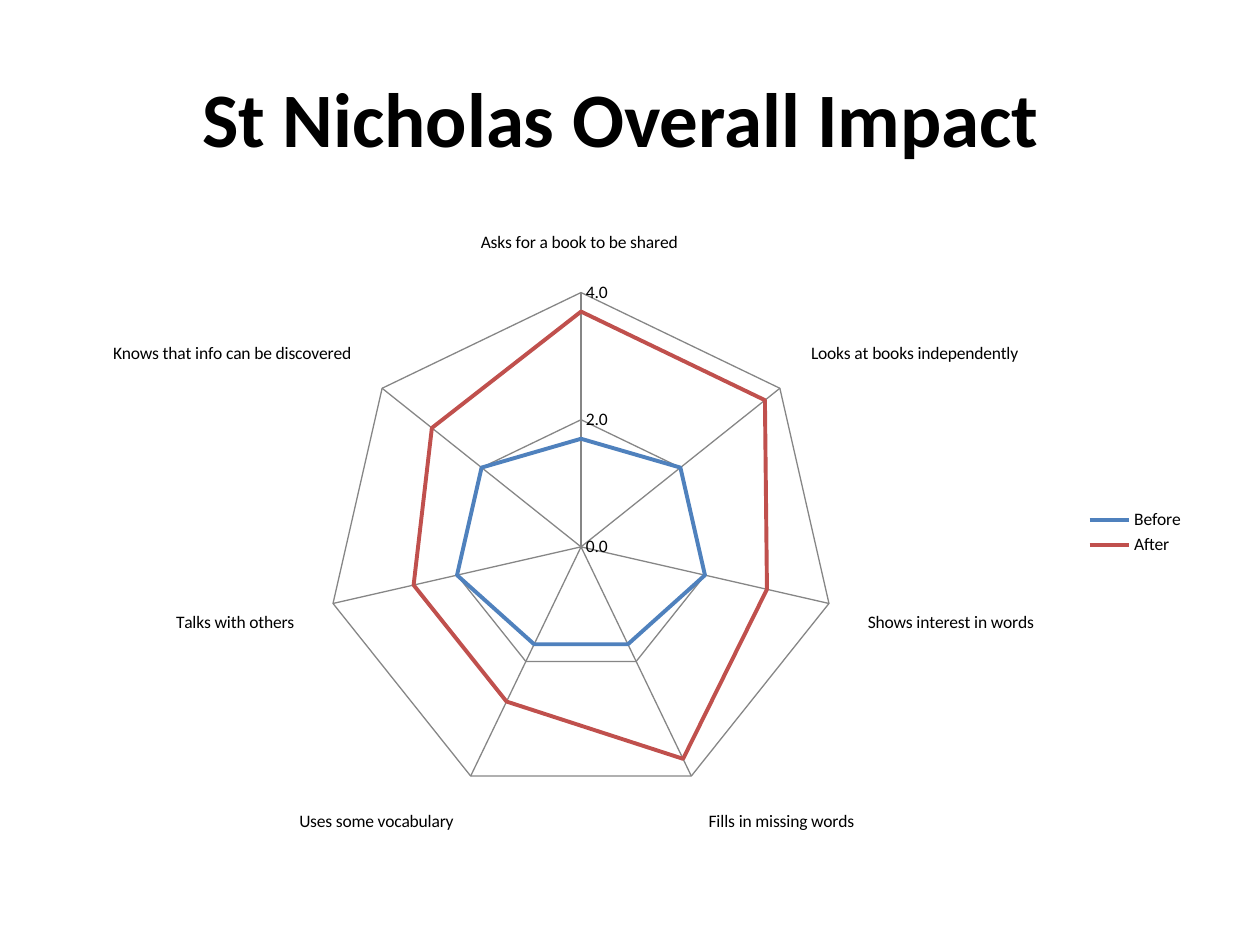
from pptx import Presentation
from pptx import util as u
from pptx.chart.data import CategoryChartData
from pptx.dml.color import RGBColor
from pptx.enum import chart as ch, text

COLORS = {"text": "000000", "grid": "868686", "Before": "4F81BD", "After": "C0504D"}
SCORES = {
    "Before": (1.7, 2, 2, 1.7, 1.7, 2, 2),
    "After": (3.7, 3.7, 3, 3.7, 2.7, 2.7, 3),
}
SKILLS = (
    "Asks for a book to be shared ",
    "Looks at books independently",
    "Shows interest in words",
    "Fills in missing words",
    "Uses some vocabulary",
    "Talks with others",
    "Knows that info can be discovered",
)


class SlideBuilder:
    font_name = "Calibri"

    def __init__(self, slide):
        self.s = slide

    def color(self, name):
        return RGBColor.from_string(COLORS[name])

    def style_font(self, font, size, bold=False):
        font.name = self.font_name
        font.size = u.Pt(size)
        font.bold = bold
        font.color.rgb = self.color("text")

    def style_line(self, line, name, width):
        line.color.rgb = self.color(name)
        line.width = u.Pt(width)

    def title(self, words, box):
        sp = self.s.shapes.add_textbox(*map(u.Inches, box))
        tf = sp.text_frame
        tf.word_wrap = True
        tf.vertical_anchor = text.MSO_ANCHOR.MIDDLE
        p = tf.paragraphs[0]
        p.text = words
        p.alignment = text.PP_ALIGN.CENTER
        self.style_font(p.font, 44, bold=True)

    def radar(self, categories, series, box):
        data = CategoryChartData(number_format="0.0")
        data.categories = categories
        for name, values in series.items():
            data.add_series(name, values)
        chart = self.s.shapes.add_chart(
            ch.XL_CHART_TYPE.RADAR, *map(u.Inches, box), data
        ).chart
        self.style_font(chart.font, 10)
        chart.has_title = False
        chart.has_legend = True
        chart.legend.position = ch.XL_LEGEND_POSITION.RIGHT
        chart.legend.include_in_layout = False

        for axis in (chart.category_axis, chart.value_axis):
            axis.has_major_gridlines = True
            axis.major_tick_mark = ch.XL_TICK_MARK.NONE
            axis.minor_tick_mark = ch.XL_TICK_MARK.NONE
            self.style_line(axis.major_gridlines.format.line, "grid", 0.75)
        chart.category_axis.format.line.fill.background()
        axis = chart.value_axis
        axis.minimum_scale, axis.maximum_scale, axis.major_unit = 0, 4, 2
        axis.tick_labels.number_format = "0.0"
        axis.tick_labels.number_format_is_linked = False
        self.style_line(axis.format.line, "grid", 0.75)

        plot = chart.plots[0]
        plot.vary_by_categories = False
        for ser in plot.series:
            ser.marker.style = ch.XL_MARKER_STYLE.NONE
            self.style_line(ser.format.line, ser.name, 2.25)


def main():
    prs = Presentation()
    prs.slide_width, prs.slide_height = u.Inches(10), u.Inches(7.5)
    builder = SlideBuilder(prs.slides.add_slide(prs.slide_layouts[6]))
    builder.title("St Nicholas Overall Impact ", (0.5, 0.3, 9, 1.25))
    builder.radar(SKILLS, SCORES, (0.5, 1.75, 9, 4.95))
    prs.save("out.pptx")


if __name__ == "__main__":
    main()
